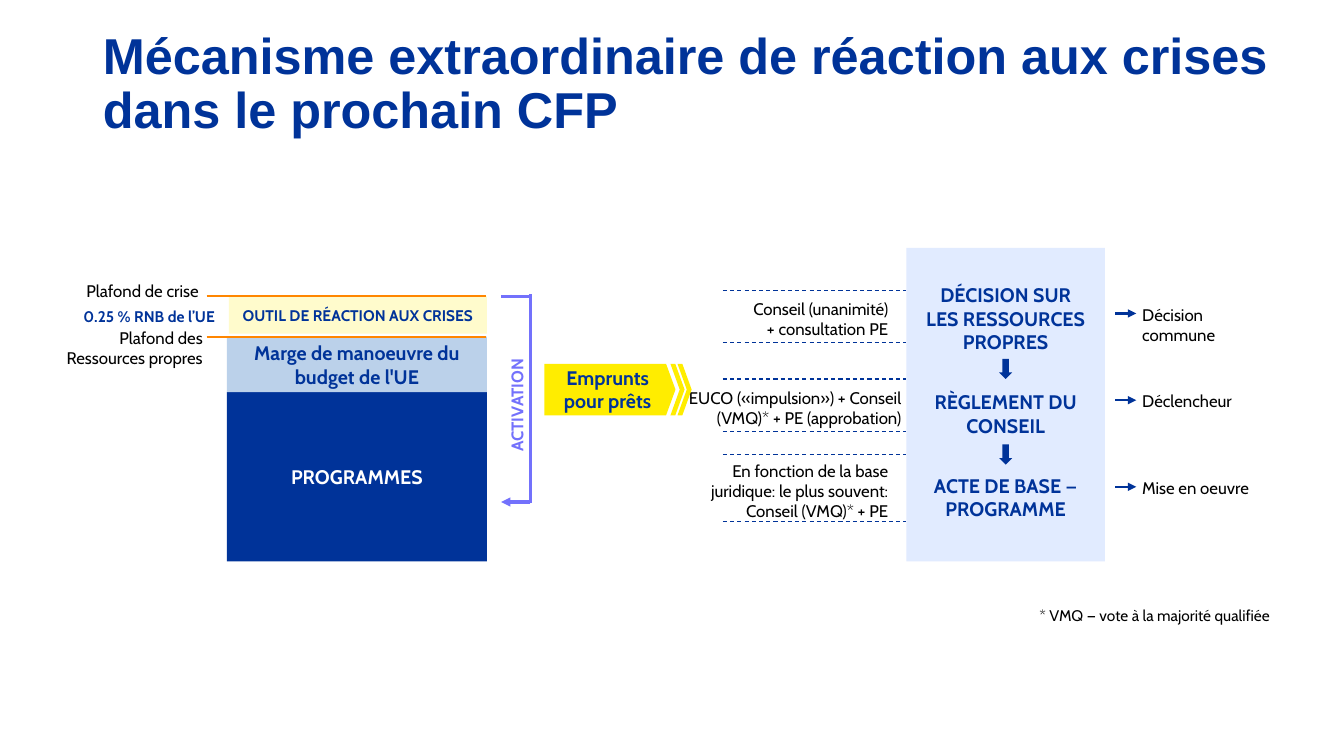
from dataclasses import dataclass

from lxml.etree import SubElement
from pptx import Presentation
from pptx.dml.color import RGBColor
from pptx.enum.dml import MSO_LINE
from pptx.enum.shapes import MSO_CONNECTOR, MSO_SHAPE as Shape
from pptx.enum.text import MSO_ANCHOR as Anchor, MSO_AUTO_SIZE as AutoSize, PP_ALIGN as Align
from pptx.oxml.ns import qn
from pptx.util import Inches, Pt


@dataclass(frozen=True)
class Theme:
    navy: str = "003399"
    violet: str = "7371FC"
    orange: str = "FF8600"
    yellow: str = "FFED00"
    cream: str = "FFFBCC"
    sky: str = "BBD1EA"
    pale: str = "E1EBFF"
    black: str = "000000"
    white: str = "FFFFFF"
    title_font: str = "Arial"
    body_font: str = "Cabin"
    title: int = 36
    heading: int = 14
    label: int = 12
    small: int = 11


theme = Theme()

TITLE = "Mécanisme extraordinaire de réaction aux crises dans le prochain CFP"

# Budget layers: text, (left, top, width, height), fill, text colour, size
LAYERS = [
    ("PROGRAMMES", (2.25, 3.89, 2.58, 1.68), theme.navy, theme.white, theme.heading),
    ("Marge de manoeuvre du budget de l'UE", (2.25, 3.34, 2.58, 0.55),
     theme.sky, theme.navy, theme.heading),
    ("OUTIL DE RÉACTION AUX CRISES", (2.27, 2.94, 2.56, 0.37),
     theme.cream, theme.navy, theme.small),
]
CEILINGS = [
    ("Plafond de crise", (0.73, 2.74, 1.34, 0.3), 2.94),
    ("Plafond des Ressources propres", (0.56, 3.2, 1.55, 0.5), 3.34),
]
GNI_SHARE = "0.25 % RNB de l’UE"
ACTIVATION = "ACTIVATION"
LOANS = "Emprunts pour prêts"

# Decision steps: act, its box top and height; procedure, its box;
# the two dashed limits; outcome, its arrow height
STEPS = [
    (["DÉCISION SUR LES RESSOURCES PROPRES"], 2.76, 0.81,
     ["Conseil (unanimité)", "+ consultation PE"], (7.17, 2.91, 1.74, 0.5),
     (2.88, 3.4), "Décision commune", 3.11),
    (["RÈGLEMENT DU CONSEIL"], 3.82, 0.57,
     ["EUCO («impulsion») + Conseil (VMQ)* + PE (approbation)"], (6.62, 3.8, 2.42, 0.5),
     (3.76, 4.28), "Déclencheur", 3.97),
    (["ACTE DE BASE —", "PROGRAMME"], 4.65, 0.57,
     ["En fonction de la base juridique: le plus souvent:", "Conseil (VMQ)* + PE"],
     (6.71, 4.52, 2.2, 0.71), (4.51, 5.17), "Mise en oeuvre", 4.83),
]
STEP_ARROW_TOPS = (3.56, 4.41)
FOOTNOTE = "* VMQ — vote à la majorité qualifiée"

deck = Presentation()
deck.slide_width, deck.slide_height = Inches(13.33), Inches(7.5)
slide = deck.slides.add_slide(deck.slide_layouts[5])


def rgb(value):
    return RGBColor.from_string(value)


def apply(target, values):
    for name, value in values.items():
        setattr(target, name, value)


def write(frame, lines, color=theme.black, size=theme.label, bold=False,
          align=Align.LEFT, font=theme.body_font, spacing=None, **frame_format):
    apply(frame, {"word_wrap": True, **frame_format})
    for number, line in enumerate(lines):
        paragraph = frame.paragraphs[0] if number == 0 else frame.add_paragraph()
        apply(paragraph, {"alignment": align, "line_spacing": spacing})
        run = paragraph.add_run()
        run.text = line
        apply(run.font, {"name": font, "size": Pt(size), "bold": bold})
        run.font.color.rgb = rgb(color)


def label(lines, box, **style):
    text = slide.shapes.add_textbox(*map(Inches, box))
    write(text.text_frame, lines, **style)
    return text


def block(kind, box, fill, adjust=None):
    """Add a flat filled shape without outline."""
    shape = slide.shapes.add_shape(kind, *map(Inches, box))
    shape.shadow.inherit = False
    shape.fill.solid()
    shape.fill.fore_color.rgb = rgb(fill)
    shape.line.fill.background()
    if adjust is not None:
        shape.adjustments[0] = adjust
    return shape


def rule(start, end, color, width, dashed=False, arrow=False):
    line = slide.shapes.add_connector(MSO_CONNECTOR.STRAIGHT, *map(Inches, start + end))
    line.line.color.rgb = rgb(color)
    line.line.width = Pt(width)
    if dashed:
        line.line.dash_style = MSO_LINE.DASH
    if arrow:
        SubElement(line.line._get_or_add_ln(), qn("a:tailEnd"), type="triangle")
    SubElement(line._element.spPr, qn("a:effectLst"))


HEADING = {"color": theme.navy, "size": theme.heading, "bold": True, "align": Align.CENTER}


def draw_title():
    title = slide.shapes.title
    apply(title, {"left": Inches(0.92), "top": Inches(0.4),
                  "width": Inches(11.9), "height": Inches(0.89)})
    write(title.text_frame, [TITLE], color=theme.navy, size=theme.title, bold=True,
          font=theme.title_font, spacing=0.9, vertical_anchor=Anchor.MIDDLE,
          auto_size=AutoSize.NONE)


def draw_budget():
    for text, box, fill, color, size in LAYERS:
        layer = block(Shape.RECTANGLE, box, fill)
        write(layer.text_frame, [text], **{**HEADING, "color": color, "size": size},
              vertical_anchor=Anchor.MIDDLE, margin_top=0, margin_bottom=0)
    for text, box, height in CEILINGS:
        label([text], box, align=Align.RIGHT)
        rule((2.05, height), (4.82, height), theme.orange, 1.5)
    label([GNI_SHARE], (0.62, 3, 1.72, 0.29), **{**HEADING, "size": theme.small})


def draw_activation():
    left, right, top, bottom = 4.97, 5.26, 2.94, 4.98
    activation = label([ACTIVATION], (4.49, 3.87, 1.27, 0.3),
                       **{**HEADING, "color": theme.violet, "size": theme.label})
    activation.rotation = 270
    rule((right, bottom), (left, bottom), theme.violet, 2.25, arrow=True)
    rule((left, top), (right, top), theme.violet, 2.25)
    rule((right, top - 0.02), (right, bottom + 0.01), theme.violet, 2.25)


def draw_loans():
    top, height = 3.61, 0.51
    loans = block(Shape.PENTAGON, (5.4, top, 1.3, height), theme.yellow, 0.183)
    write(loans.text_frame, [LOANS], **HEADING, vertical_anchor=Anchor.MIDDLE,
          margin_top=Inches(0.04), margin_bottom=Inches(0.05))
    for left in (6.65, 6.72):
        block(Shape.CHEVRON, (left, top, 0.14, height), theme.yellow, 0.655)


def draw_decisions():
    block(Shape.RECTANGLE, (8.99, 2.46, 1.97, 3.11), theme.pale)
    for act, top, height, procedure, box, limits, outcome, middle in STEPS:
        label(act, (9.06, top, 1.83, height), **HEADING)
        label(procedure, box, align=Align.RIGHT)
        for limit in limits:
            rule((7.17, limit), (8.99, limit), theme.navy, 0.75, dashed=True)
        rule((11.06, middle), (11.27, middle), theme.navy, 1.5, arrow=True)
        label([outcome], (11.23, middle - 0.14, 1.55, 0.3))
    for top in STEP_ARROW_TOPS:
        block(Shape.DOWN_ARROW, (9.91, top, 0.13, 0.2), theme.navy)
    label([FOOTNOTE], (10.21, 5.96, 2.59, 0.29), size=theme.small)


if __name__ == "__main__":
    draw_title()
    draw_activation()
    draw_decisions()
    draw_budget()
    draw_loans()
    deck.save("out.pptx")
